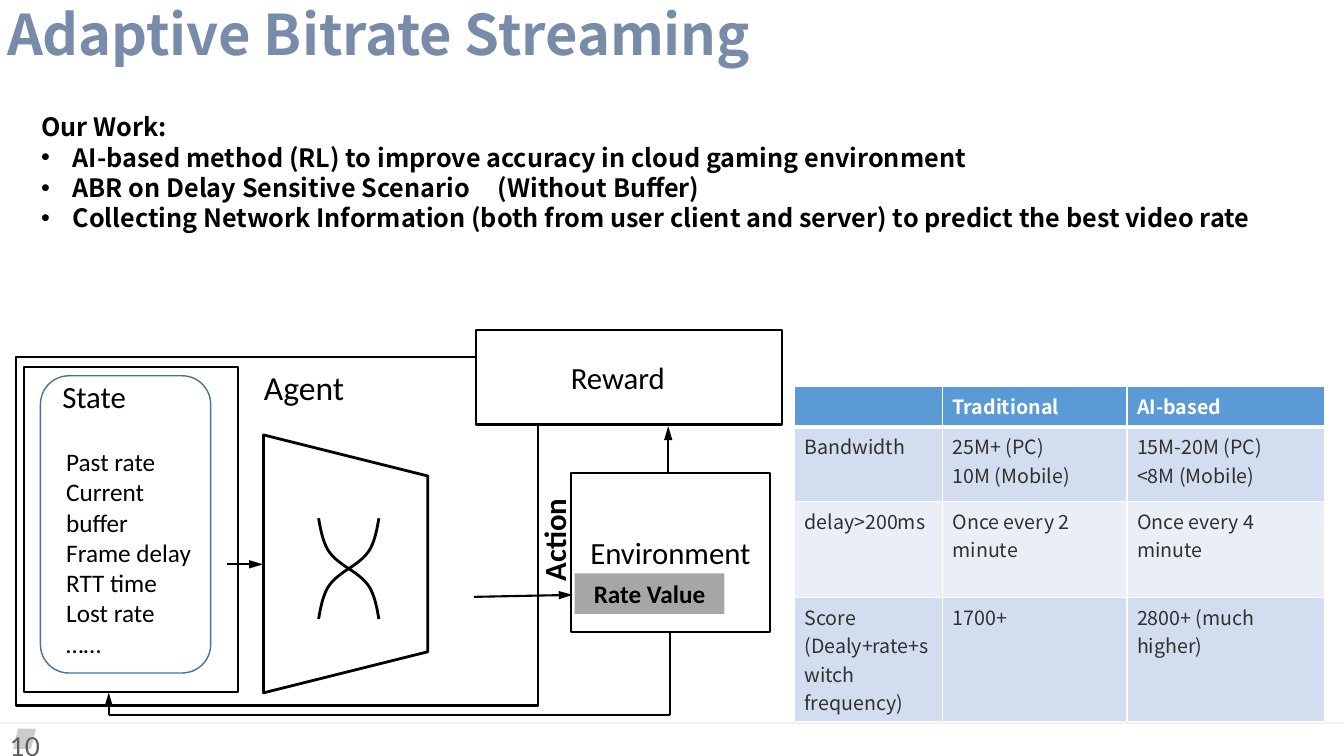
from dataclasses import dataclass, field
from typing import Any

from lxml import etree
from pptx import Presentation
from pptx.dml.color import RGBColor
from pptx.enum import shapes, text
from pptx.oxml import ns
from pptx.util import Cm, Pt

COLORS = {
    "black": "000000", "white": "FFFFFF", "title": "788BA9", "number": "5F5F5F",
    "rate": "A6A6A6", "state": "43739E", "head": "5B9BD5", "cell": "303030",
    "odd": "D2DEEF", "even": "EAEFF7",
}
SANS, BODY, LATO = "Noto Sans CJK SC", "Calibri", "Lato"
KIND = shapes.MSO_SHAPE
CENTER = {"alignment": text.PP_ALIGN.CENTER}
MIDDLE = {"vertical_anchor": text.MSO_ANCHOR.MIDDLE}


@dataclass
class Label:
    lines: list[str]
    size: float
    font: str = BODY
    color: str = "black"
    bold: bool = False
    paragraph: dict[str, Any] = field(default_factory=dict)
    frame: dict[str, Any] = field(default_factory=dict)
    bullets_from: int = 99


@dataclass
class Box:
    at: tuple[float, float, float, float]
    kind: Any = None
    fill: str = ""
    line: str = ""
    weight: float = 1.5
    alpha: int = 100
    rotation: float = 0
    label: Label | None = None


@dataclass
class Line:
    start: tuple[float, float]
    end: tuple[float, float]
    arrow: bool = True


@dataclass
class Curve:
    center: tuple[float, float]
    flip_x: int
    flip_y: int


def rgb(name: str) -> RGBColor:
    return RGBColor.from_string(COLORS[name])


def apply(target: Any, values: dict[str, Any]) -> None:
    for name, value in values.items():
        setattr(target, name, value)


def add(parent: Any, tag: str, **attrs: Any) -> Any:
    return etree.SubElement(parent, ns.qn(tag), {k: str(v) for k, v in attrs.items()})


def write(tf: Any, label: Label) -> None:
    apply(tf, {"word_wrap": True, "auto_size": text.MSO_AUTO_SIZE.NONE,
               "vertical_anchor": text.MSO_ANCHOR.TOP} | label.frame)
    for i, line in enumerate(label.lines):
        p = tf.paragraphs[0] if i == 0 else tf.add_paragraph()
        if i >= label.bullets_from:
            pPr = p._p.get_or_add_pPr()
            pPr.set("marL", str(Cm(0.79)))
            pPr.set("indent", str(-Cm(0.79)))
            add(pPr, "a:buFont", typeface="Arial")
            add(pPr, "a:buChar", char="•")
            add(add(pPr, "a:tabLst"), "a:tab", pos=Cm(11.51), algn="l")
        apply(p, {"alignment": text.PP_ALIGN.LEFT} | label.paragraph)
        r = p.add_run()
        r.text = line
        apply(r.font, {"size": Pt(label.size), "name": label.font, "bold": label.bold})
        r.font.color.rgb = rgb(label.color)
        add(r._r.get_or_add_rPr(), "a:ea", typeface=label.font)


def draw_box(s: Any, box: Box) -> None:
    at = [Cm(v) for v in box.at]
    if box.kind is None:
        sp = s.shapes.add_textbox(*at)
    else:
        sp = s.shapes.add_shape(box.kind, *at)
        sp.shadow.inherit = False
        if box.fill:
            sp.fill.solid()
            sp.fill.fore_color.rgb = rgb(box.fill)
            if box.alpha < 100:
                color = sp._element.spPr.find(".//" + ns.qn("a:srgbClr"))
                add(color, "a:alpha", val=box.alpha * 1000)
        else:
            sp.fill.background()
        if box.line:
            sp.line.color.rgb = rgb(box.line)
            sp.line.width = Pt(box.weight)
        else:
            sp.line.fill.background()
    sp.rotation = box.rotation
    if box.label:
        write(sp.text_frame, box.label)


def draw_line(s: Any, line: Line) -> None:
    ends = [Cm(v) for v in line.start + line.end]
    sp = s.shapes.add_connector(shapes.MSO_CONNECTOR.STRAIGHT, *ends)
    sp.line.color.rgb = rgb("black")
    sp.line.width = Pt(1.5)
    if line.arrow:
        add(sp.line._get_or_add_ln(), "a:tailEnd", type="triangle", w="med", len="lg")
    add(sp._element.spPr, "a:effectLst")


def draw_curve(s: Any, curve: Curve) -> None:
    controls = [[(0, 0), (0.2, 0.13), (0.41, 0.28), (0.53, 0.48)],
                [(0.53, 0.48), (0.66, 0.71), (0.71, 0.99), (0.76, 1.27)]]
    points = []
    for a, b, c, d in controls:
        for t in (n / 12 for n in range(13)):
            dx, dy = ((1 - t) ** 3 * a[k] + 3 * (1 - t) ** 2 * t * b[k]
                      + 3 * (1 - t) * t ** 2 * c[k] + t ** 3 * d[k] for k in (0, 1))
            points.append((Cm(curve.center[0] + curve.flip_x * dx),
                           Cm(curve.center[1] + curve.flip_y * dy)))
    builder = s.shapes.build_freeform(*points[0])
    builder.add_line_segments(points[1:], close=False)
    sp = builder.convert_to_shape()
    sp.shadow.inherit = False
    sp.fill.background()
    sp.line.color.rgb = rgb("black")
    sp.line.width = Pt(2)


def draw_table(s: Any) -> None:
    rows = [["", "Traditional", "AI-based"],
            ["Bandwidth", "25M+ (PC)\n10M (Mobile)", "15M-20M (PC)\n<8M (Mobile)"],
            ["delay>200ms", "Once every 2 minute", "Once every 4 minute"],
            ["Score (Dealy+rate+switch frequency)", "1700+", "2800+ (much higher)"]]
    widths, heights = [3.73, 4.65, 4.98], [0.97, 1.87, 2.42, 3.12]
    table = s.shapes.add_table(4, 3, Cm(20.02), Cm(9.73), Cm(13.36), Cm(8.38)).table
    for column, width in zip(table.columns, widths):
        column.width = Cm(width)
    for i, (row, height) in enumerate(zip(rows, heights)):
        table.rows[i].height = Cm(height)
        fill = "head" if i == 0 else "odd" if i % 2 else "even"
        for j, value in enumerate(row):
            cell = table.cell(i, j)
            tcPr = cell._tc.get_or_add_tcPr()
            for side in "LRTB":
                thick = (i, side) in ((0, "B"), (1, "T"))
                ln = add(tcPr, f"a:ln{side}", w=Pt(3 if thick else 1))
                add(add(ln, "a:solidFill"), "a:srgbClr", val=COLORS["white"])
            cell.fill.solid()
            cell.fill.fore_color.rgb = rgb(fill)
            if value:
                write(cell.text_frame, Label(value.split("\n"), 14, SANS,
                                             "cell" if i else "white", i == 0))


OUR_WORK = Label(
    ["Our Work:", "AI-based method (RL) to improve accuracy in cloud gaming environment",
     "ABR on Delay Sensitive Scenario\t(Without Buffer)",
     "Collecting Network Information (both from user client and server) "
     "to predict the best video rate"],
    18, SANS, bold=True, paragraph={"line_spacing": Pt(21.7)}, frame=MIDDLE, bullets_from=1)
STATES = Label(["Past rate", "Current buffer Frame delay", "RTT time", "Lost rate", "……"],
               18, frame={"margin_top": Cm(0.81)})
FOOTER = [
    Box((0, 18.19, 33.87, 0.05), KIND.RECTANGLE, "black", alpha=5),
    Box((0.33, 18.36, 0.58, 0.51), KIND.PARALLELOGRAM, "black", alpha=20),
    Box((0, 18.29, 33.87, 0.66), label=Label(["10"], 18.6, LATO, "number")),
]
DIAGRAM = [
    Box((0.79, 2.41, 32.74, 3.86), KIND.RECTANGLE, label=OUR_WORK),
    Box((0, 0.18, 28.93, 3.15), label=Label(["Adaptive Bitrate Streaming"], 40, SANS, "title", True,
        {"line_spacing": 0.9}, {"margin_top": Cm(0), "margin_left": Cm(0.18)})),
    Box((0.41, 8.99, 13.16, 8.79), KIND.RECTANGLE, "white", "black"),
    Box((0.61, 9.25, 5.38, 8.18), KIND.RECTANGLE, "white", "black"),
    Line((16.84, 12.01), (16.84, 10.74)),
    Line((2.74, 18.01), (16.89, 18.01), False),
    Line((16.89, 18.01), (16.89, 15.77), False),
    Line((2.74, 18.01), (2.74, 17.45)),
    Box((14.38, 11.91, 5.03, 4.01), KIND.RECTANGLE, "white", "black",
        label=Label(["Environment"], 22, paragraph=CENTER, frame=MIDDLE)),
    Line((11.94, 15.04), (14.43, 14.99)),
    Box((14.48, 14.45, 3.78, 1.02), KIND.RECTANGLE, "rate",
        label=Label(["Rate Value"], 18, bold=True, paragraph=CENTER, frame=MIDDLE)),
    Box((5.46, 12.14, 6.5, 4.14), KIND.TRAPEZOID, line="black", weight=2, rotation=90),
    *(Curve((8.79, 14.33), x, y) for x in (-1, 1) for y in (-1, 1)),
    Line((5.72, 14.22), (6.63, 14.22)),
    Box((12.14, 12.78, 3.35, 0.89), rotation=270, label=Label(["Action"], 22, bold=True)),
    Box((11.99, 8.31, 7.72, 2.39), KIND.RECTANGLE, "white", "black", label=Label(
        ["Reward"], 22, paragraph=CENTER, frame=MIDDLE | {"margin_right": Cm(0.81)})),
    Box((6.4, 9.12, 3.02, 0.97), label=Label(["Agent"], 24)),
    Box((1.02, 9.47, 4.29, 7.49), KIND.ROUNDED_RECTANGLE, "white", "state", 1),
    Box((1.42, 10.44, 3.78, 6.32), label=STATES),
    Box((1.32, 9.4, 4.06, 1.19), label=Label(["State"], 22)),
]


def main() -> None:
    prs = Presentation()
    apply(prs, {"slide_width": Cm(33.87), "slide_height": Cm(19.05)})
    s = prs.slides.add_slide(prs.slide_layouts[6])
    draw = {Box: draw_box, Line: draw_line, Curve: draw_curve}
    for item in FOOTER:
        draw_box(s, item)
    draw_table(s)
    for item in DIAGRAM:
        draw[type(item)](s, item)
    prs.save("out.pptx")


if __name__ == "__main__":
    main()
